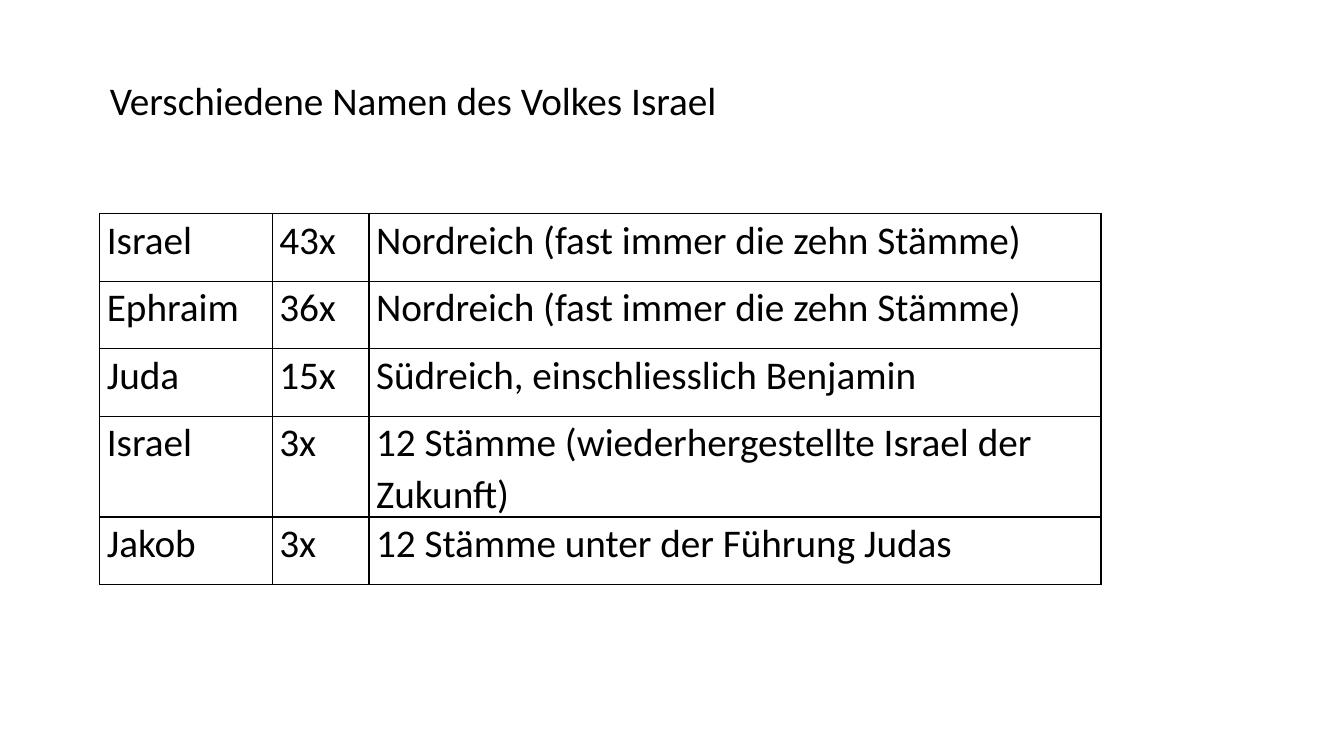
from dataclasses import dataclass

from lxml import etree
from pptx import Presentation
from pptx.dml.color import RGBColor
from pptx.enum import text
from pptx.oxml import ns
from pptx.util import Inches, Pt


@dataclass(frozen=True)
class Theme:
    font: str = "Calibri"
    size: int = 28
    ink: str = "000000"
    border: int = 1
    line_spacing: float = 1.07


THEME = Theme()
TITLE = "Verschiedene Namen des Volkes Israel"
COLUMN_WIDTHS = (1.71, 0.96, 7.26)
ROW_HEIGHT = 0.67
NAMES = (
    ("Israel", "43x", "Nordreich (fast immer die zehn Stämme)"),
    ("Ephraim", "36x", "Nordreich (fast immer die zehn Stämme)"),
    ("Juda", "15x", "Südreich, einschliesslich Benjamin"),
    ("Israel", "3x", "12 Stämme (wiederhergestellte Israel der Zukunft)"),
    ("Jakob", "3x", "12 Stämme unter der Führung Judas"),
)


def write_text(text_frame, content):
    text_frame.text = content
    paragraph = text_frame.paragraphs[0]
    font = paragraph.runs[0].font
    font.name = THEME.font
    font.size = Pt(THEME.size)
    font.color.rgb = RGBColor.from_string(THEME.ink)
    return paragraph


def add_title(slide, content, left, top, width, height):
    shape = slide.shapes.add_textbox(Inches(left), Inches(top), Inches(width), Inches(height))
    write_text(shape.text_frame, content)
    shape.text_frame.word_wrap = False
    shape.text_frame.auto_size = text.MSO_AUTO_SIZE.SHAPE_TO_FIT_TEXT


def add_borders(cell):
    """Line all four sides; call before the fill, which must follow the lines."""
    properties = cell._tc.get_or_add_tcPr()
    for side in ("a:lnL", "a:lnR", "a:lnT", "a:lnB"):
        line = etree.SubElement(properties, ns.qn(side), w=str(Pt(THEME.border)))
        fill = etree.SubElement(line, ns.qn("a:solidFill"))
        etree.SubElement(fill, ns.qn("a:srgbClr"), val=THEME.ink)


def format_cell(cell, content):
    cell.margin_left = cell.margin_right = Inches(0.07)
    cell.margin_top = cell.margin_bottom = 0
    write_text(cell.text_frame, content).line_spacing = THEME.line_spacing
    add_borders(cell)
    cell.fill.background()


def add_names_table(slide, rows, left, top):
    frame = slide.shapes.add_table(
        len(rows), len(COLUMN_WIDTHS), Inches(left), Inches(top),
        Inches(sum(COLUMN_WIDTHS)), Inches(ROW_HEIGHT * len(rows)),
    )
    table = frame.table
    table.first_row = table.horz_banding = False
    for column, width in zip(table.columns, COLUMN_WIDTHS):
        column.width = Inches(width)
    for row, contents in zip(table.rows, rows):
        row.height = Inches(ROW_HEIGHT)
        for cell, content in zip(row.cells, contents):
            format_cell(cell, content)


def main():
    presentation = Presentation()
    presentation.slide_width = Inches(13.33)
    presentation.slide_height = Inches(7.5)
    slide = presentation.slides.add_slide(presentation.slide_layouts[6])
    add_title(slide, TITLE, 0.99, 0.71, 6.28, 0.57)
    add_names_table(slide, NAMES, 0.99, 2.12)
    presentation.save("out.pptx")


if __name__ == "__main__":
    main()
